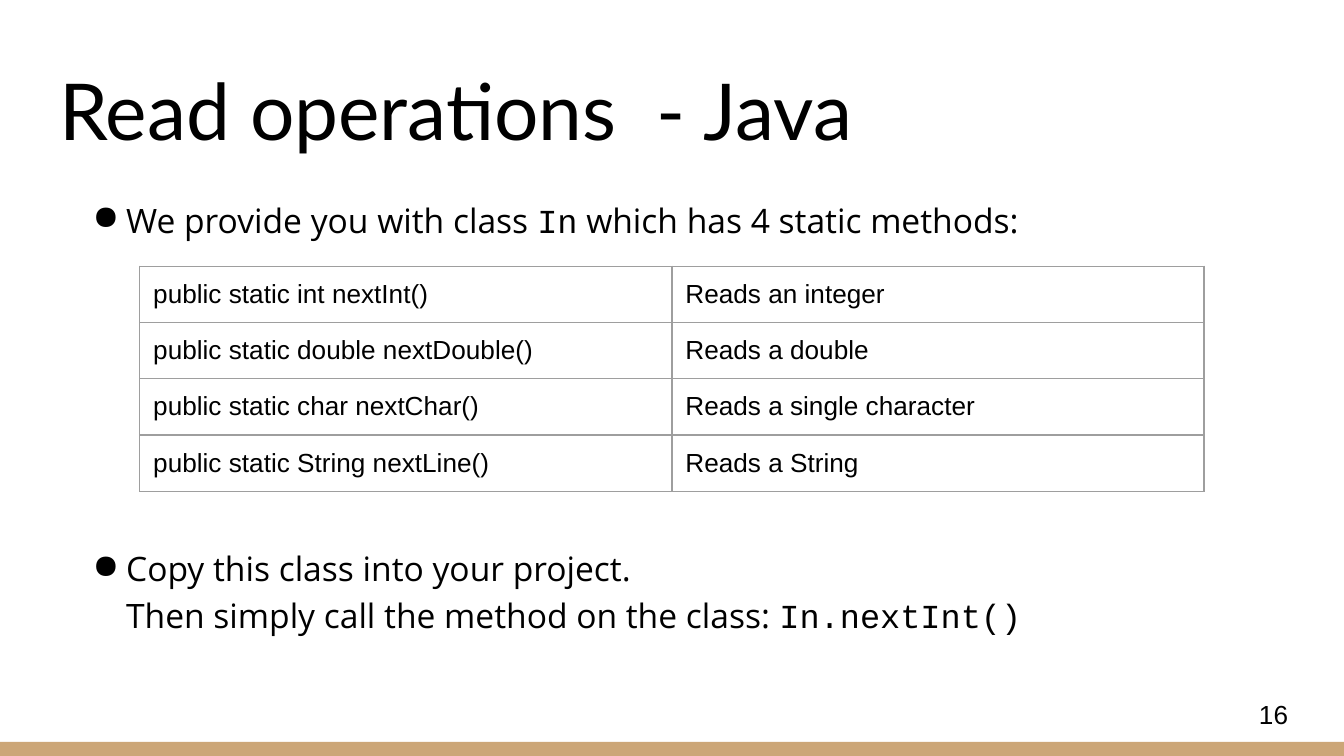
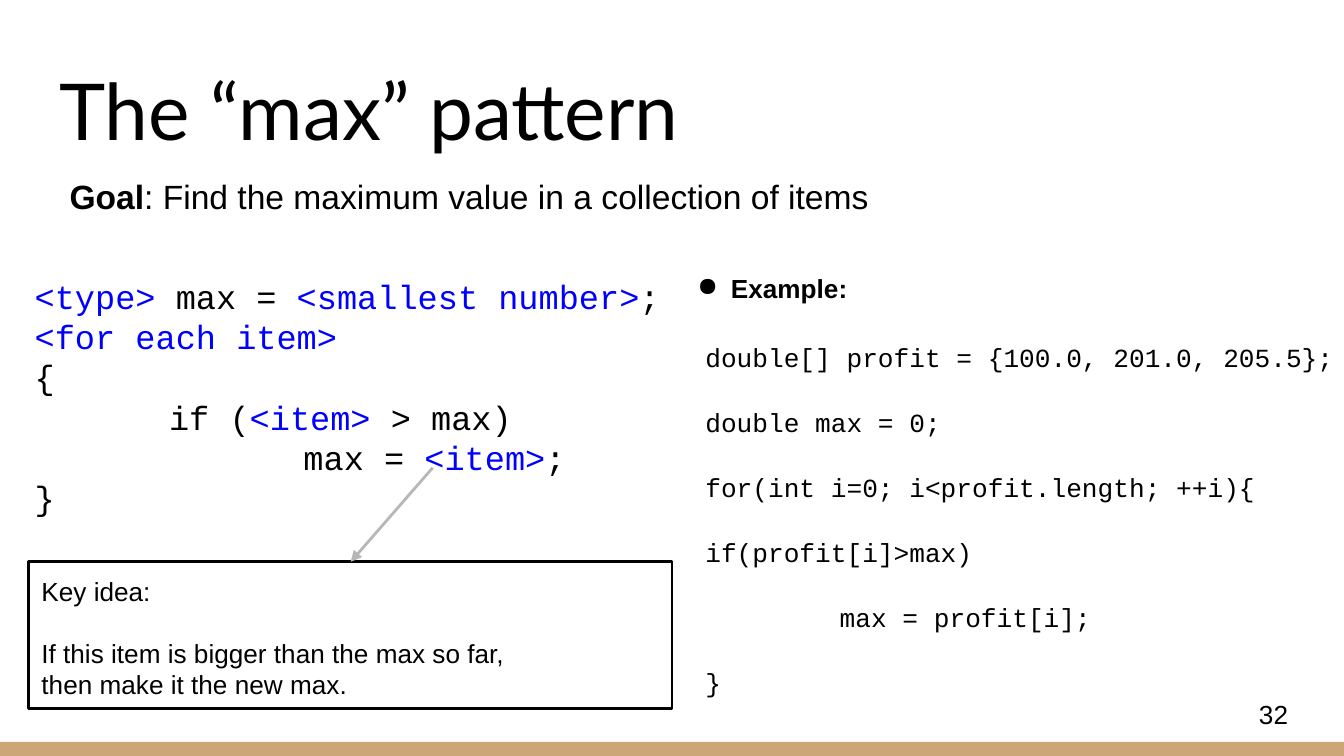
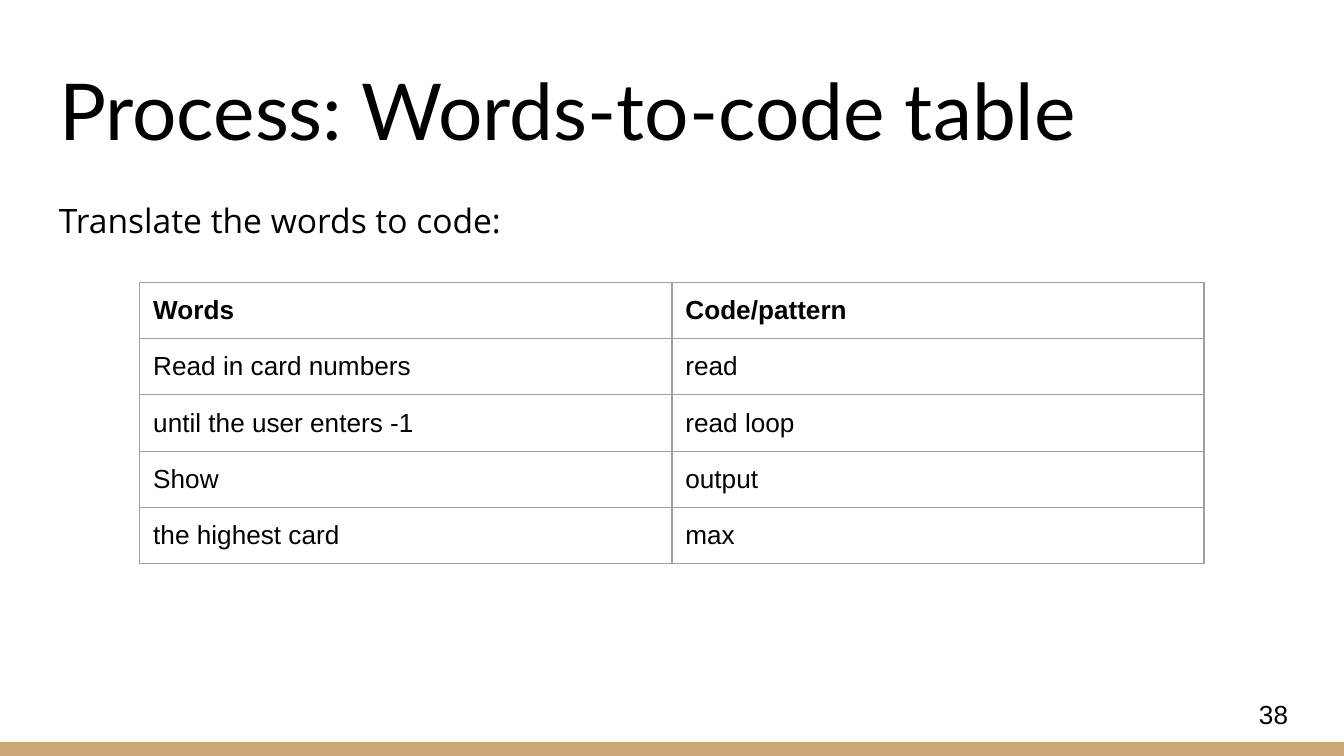
from dataclasses import dataclass, field

from lxml import etree
from pptx import Presentation
from pptx import util as u
from pptx.dml.color import RGBColor
from pptx.enum import shapes, text
from pptx.oxml import ns


@dataclass(frozen=True)
class Theme:
    """Colours, fonts and type sizes of the deck."""
    ink: str = "000000"
    paper: str = "FFFFFF"
    band: str = "CCA677"
    blank: str = "0000FF"
    arrow: str = "B7B7B7"
    grid: str = "9E9E9E"
    head: str = "Lato"
    body: str = "Open Sans"
    sans: str = "Arial"
    mono: str = "Courier New"
    title: float = 42
    large: float = 18
    small: float = 14


@dataclass
class Line:
    """A paragraph: its runs and the format that is its own."""
    runs: list
    form: dict = field(default_factory=dict)


T = Theme()
WIDE, HIGH, PAD = 720, 405, 7.2
TITLE = (24.5, 25.2, 671, 65.5)
BODY = (24.5, 96.5, 671, 264.2)
BAND = (0, 397.4, WIDE, 7.9)
PAGE = (667.4, 367.2, 43.2, 31)
PROSE = dict(font=T.body, lead=1.15, after=16)
CODE = dict(font=T.mono)


def node(parent, tag, **attrs):
    """Append a drawing element and return it."""
    item = etree.SubElement(parent, ns.qn(tag))
    for key, value in attrs.items():
        item.set(key, str(value))
    return item


def points(box):
    """Turn a box of numbers into lengths."""
    return [u.Pt(side) for side in box]


def paint(par, runs, size, font, color, bold):
    """Fill a paragraph with runs and line breaks."""
    for item in runs:
        words, own = (item, {}) if isinstance(item, str) else item
        for pos, part in enumerate(words.split("\n")):
            if pos:
                par.add_line_break()
            run = par.add_run()
            run.text = part
            run.font.size = u.Pt(size)
            run.font.name = own.get("font", font)
            run.font.bold = own.get("bold", bold)
            run.font.color.rgb = RGBColor.from_string(own.get("color", color))


def shape_par(par, lead, before, after, left, hang, bullet):
    """Set the spacing, indent and bullet of a paragraph."""
    par.alignment = text.PP_ALIGN.LEFT
    par.line_spacing = lead
    par.space_before, par.space_after = u.Pt(before), u.Pt(after)
    props = par._p.get_or_add_pPr()
    props.set("marL", str(u.Pt(left)))
    props.set("indent", str(u.Pt(-hang)))
    if bullet:
        tint = node(props, "a:buClr")
        node(tint, "a:srgbClr", val=T.ink)
        node(props, "a:buChar", char="●")


def write(frame, lines, size=T.large, font=T.sans, color=T.ink, bold=False,
          lead=1.0, before=0, after=0, left=0, hang=0, bullet=False):
    """Write lines into a text frame in the given format."""
    base = dict(lead=lead, before=before, after=after,
                left=left, hang=hang, bullet=bullet)
    for pos, line in enumerate(lines):
        line = line if isinstance(line, Line) else Line([line])
        par = frame.add_paragraph() if pos else frame.paragraphs[0]
        shape_par(par, **{**base, **line.form})
        paint(par, line.runs, size, font, color, bold)


def setup(frame, pad=PAD, anchor=text.MSO_ANCHOR.TOP):
    """Set wrapping, insets and anchor of a frame."""
    frame.word_wrap = True
    frame.auto_size = text.MSO_AUTO_SIZE.NONE
    frame.vertical_anchor = anchor
    frame.margin_left = frame.margin_right = u.Pt(PAD)
    frame.margin_top = frame.margin_bottom = u.Pt(pad)


def label(slide, box, lines, pad=PAD, anchor=text.MSO_ANCHOR.TOP, **form):
    """Add a text box."""
    frame = slide.shapes.add_textbox(*points(box)).text_frame
    setup(frame, pad, anchor)
    write(frame, lines, **form)


def panel(slide, box, fill=None, edge=None):
    """Add a plain rectangle and return it."""
    rect = slide.shapes.add_shape(shapes.MSO_SHAPE.RECTANGLE, *points(box))
    rect.shadow.inherit = False
    if fill:
        rect.fill.solid()
        rect.fill.fore_color.rgb = RGBColor.from_string(fill)
    else:
        rect.fill.background()
    if edge:
        rect.line.color.rgb = RGBColor.from_string(edge)
        rect.line.width = u.Pt(1.5)
    else:
        rect.line.fill.background()
    return rect


def arrow(slide, start, end):
    """Add a straight arrow that points at its end."""
    link = slide.shapes.add_connector(
        shapes.MSO_CONNECTOR.STRAIGHT, *points(start + end))
    link.line.color.rgb = RGBColor.from_string(T.arrow)
    link.line.width = u.Pt(1.5)
    node(link.line._get_or_add_ln(), "a:tailEnd", type="triangle")
    node(link._element.spPr, "a:effectLst")


def border(cell):
    """Draw a thin line on each side of a cell."""
    props = cell._tc.get_or_add_tcPr()
    for side in "LRTB":
        edge = node(props, f"a:ln{side}", w=u.Pt(0.75))
        tint = node(edge, "a:solidFill")
        node(tint, "a:srgbClr", val=T.grid)


def grid(slide, box, rows, head=False):
    """Add a ruled table of equal rows and columns."""
    x, y, w, step = box
    cols = len(rows[0])
    table = slide.shapes.add_table(
        len(rows), cols, *points((x, y, w, step * len(rows)))).table
    table.first_row = head
    table.horz_banding = False
    for col in table.columns:
        col.width = u.Pt(w / cols)
    for r, row in enumerate(rows):
        table.rows[r].height = u.Pt(step)
        for c, words in enumerate(row):
            cell = table.cell(r, c)
            border(cell)
            cell.fill.background()
            cell.margin_left = cell.margin_right = u.Pt(PAD)
            cell.margin_top = cell.margin_bottom = u.Pt(PAD)
            write(cell.text_frame, [words], size=T.small,
                  bold=head and r == 0)


def start(deck, name, page):
    """Add a slide with its title, band and page number."""
    slide = deck.slides.add_slide(deck.slide_layouts[5])
    slide.background.fill.solid()
    slide.background.fill.fore_color.rgb = RGBColor.from_string(T.paper)
    panel(slide, BAND, fill=T.band)
    title = slide.shapes.title
    title.left, title.top, title.width, title.height = points(TITLE)
    setup(title.text_frame, anchor=text.MSO_ANCHOR.BOTTOM)
    write(title.text_frame, [name], size=T.title, font=T.head)
    label(slide, PAGE, [str(page)], size=T.small,
          anchor=text.MSO_ANCHOR.MIDDLE)
    return slide


def methods(slide, box):
    """Place the read methods and how to call them."""
    x, y, w, h = box
    label(slide, box, [
        Line(["We provide you with class ", ("In", CODE),
              " which has 4 static methods:"]),
        Line(["Copy this class into your project.\n"
              "Then simply call the method on the class: ",
              ("In.nextInt()", CODE)], dict(before=146)),
    ], left=36, hang=18, bullet=True, **PROSE)
    grid(slide, (x + 50.4, y + 46.1, 570.2, 30.1), [
        ("public static int nextInt()", "Reads an integer"),
        ("public static double nextDouble()", "Reads a double"),
        ("public static char nextChar()", "Reads a single character"),
        ("public static String nextLine()", "Reads a String"),
    ])


def recipe(slide, box):
    """Place the general code with its key idea."""
    x, y, w, h = box
    blue = dict(color=T.blank)
    item = ("<item>", blue)
    label(slide, (x, y, w, 211), [
        Line([("<type>", blue), " max = ",
              ("<smallest number>", blue), ";"]),
        Line([("<for each item>", blue)]),
        "{",
        Line(["if (", item, " > max)"], dict(left=72)),
        Line(["max = ", item, ";"], dict(left=144)),
        "}",
    ], **CODE)
    key = panel(slide, (x + 3.6, y + 160.6, 344.9, 78.5), edge=T.ink)
    setup(key.text_frame)
    write(key.text_frame, [
        "Key idea:",
        Line(["If this item is bigger than the max so far,"],
             dict(before=16.5)),
        "then make it the new max.",
    ], size=T.small)
    arrow(slide, (x + 220.3, y + 110.2), (x + 176.4, y + 160.6))


def sample(slide, box):
    """Place the worked example."""
    x, y, w, h = box
    label(slide, (x, y, w, 24.5), ["Example:"], pad=3.6, size=T.small,
          bold=True, left=36, hang=18, bullet=True)
    label(slide, (x + 22.3, y + 36.7, w, 200.2), [
        "double[] profit = {100.0, 201.0, 205.5};",
        "double max = 0;",
        "for(int i=0; i<profit.length; ++i){",
        "if(profit[i]>max)",
        Line(["max = profit[i];"], dict(left=72)),
        "}",
    ], pad=3.6, size=T.small, before=9, after=9, **CODE)


def pattern(slide, box):
    """Place the goal above the recipe and its example."""
    x, y, w, h = box
    label(slide, (x + 5.7, y - 9.4, 651.6, 52.6), [
        Line([("Goal", dict(bold=True)),
              ": Find the maximum value in a collection of items"])])
    recipe(slide, (x - 13, y + 43.9, 362.9, 239))
    sample(slide, (x + 324, y + 46.1, 360, 237))


def words(slide, box):
    """Place the table that turns words into code."""
    x, y, w, h = box
    grid(slide, (x + 50.4, y + 54.7, 570.2, 30.1), [
        ("Words", "Code/pattern"),
        ("Read in card numbers", "read"),
        ("until the user enters -1", "read loop"),
        ("Show", "output"),
        ("the highest card", "max"),
    ], head=True)
    label(slide, (x, y, w, 42.5), ["Translate the words to code:"], **PROSE)


def main():
    """Build and save the deck."""
    deck = Presentation()
    deck.slide_width, deck.slide_height = u.Pt(WIDE), u.Pt(HIGH)
    for name, page, fill in (
        ("Read operations  - Java", 16, methods),
        ("The “max” pattern", 32, pattern),
        ("Process: Words-to-code table", 38, words),
    ):
        fill(start(deck, name, page), BODY)
    deck.save("out.pptx")


if __name__ == "__main__":
    main()
